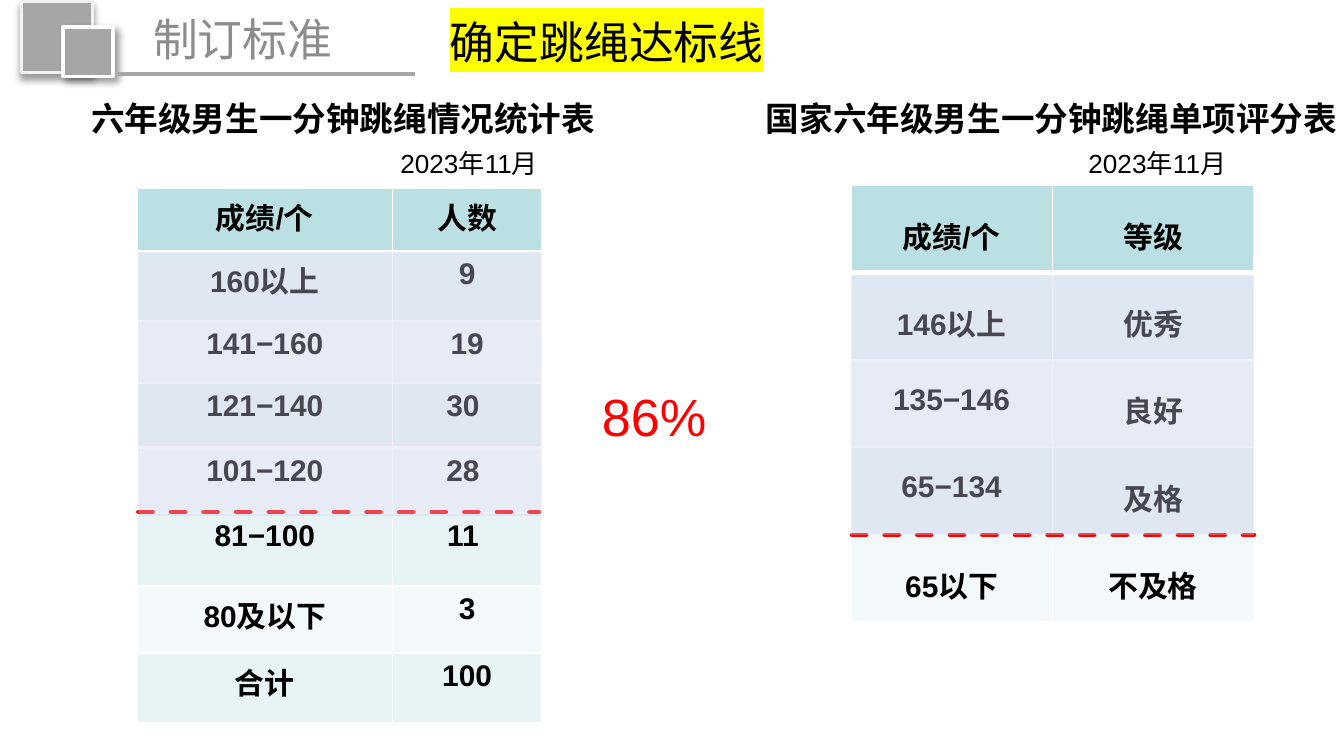
from lxml.etree import SubElement
from pptx import Presentation
from pptx.dml.color import RGBColor
from pptx.enum.dml import MSO_LINE
from pptx.enum.shapes import MSO_CONNECTOR, MSO_SHAPE
from pptx.enum.text import MSO_ANCHOR, PP_ALIGN
from pptx.oxml import parse_xml
from pptx.oxml.ns import nsdecls, qn
from pptx.util import Inches, Pt

BLACK = RGBColor(0x00, 0x00, 0x00)
WHITE = RGBColor(0xFF, 0xFF, 0xFF)
PALE_GREY = RGBColor(0xF2, 0xF2, 0xF2)
GREY = RGBColor(0xA6, 0xA6, 0xA6)
DARK_GREY = RGBColor(0x8C, 0x8C, 0x8C)
RED = RGBColor(0xFF, 0x00, 0x00)
YELLOW = RGBColor(0xFF, 0xFF, 0x00)
TEAL = RGBColor(0xBB, 0xE0, 0xE3)
BANDS = [RGBColor(0xE7, 0xF3, 0xF4), RGBColor(0xF3, 0xF9, 0xFA)]
LILAC = RGBColor(0xD1, 0xD1, 0xF0)
SANS, HAN = "Arial", "Noto Sans CJK SC"

JUMP_COUNTS = [
    ("成绩/个", "人数"), ("160以上", "9"), ("141−160", "19"), ("121−140", "30 "),
    ("101−120", "28 "), ("81−100", "11 "), ("80及以下", "3"), ("合计", "100"),
]
GRADES = [
    ("成绩/个", "等级"), ("146以上", "优秀"), ("135−146", "良好"),
    ("65−134", "及格"), ("65以下", "不及格"),
]


def add_span(para, text, size, color, font=SANS, bold=False, highlight=None):
    """Add one styled run to a paragraph."""
    span = para.add_run()
    span.text = text
    span.font.size = Pt(size)
    span.font.bold = bold
    span.font.color.rgb = color
    props = span._r.get_or_add_rPr()
    if highlight is not None:
        SubElement(SubElement(props, qn("a:highlight")), qn("a:srgbClr")).set("val", str(highlight))
    span.font.name = font
    SubElement(props, qn("a:ea")).set("typeface", HAN)


def add_text(page, box, text, size, color, anchor=MSO_ANCHOR.TOP, **style):
    """Add a one-line text box."""
    frame = page.shapes.add_textbox(*map(Inches, box)).text_frame
    frame.word_wrap = True
    frame.vertical_anchor = anchor
    add_span(frame.paragraphs[0], text, size, color, **style)


def add_rule(page, left, right, y, color, width, dashed=False):
    """Add a horizontal line, dashed with round caps on request."""
    rule = page.shapes.add_connector(
        MSO_CONNECTOR.STRAIGHT, Inches(left), Inches(y), Inches(right), Inches(y))
    rule.line.color.rgb = color
    rule.line.width = Pt(width)
    if dashed:
        rule.line.dash_style = MSO_LINE.DASH
        rule.line._get_or_add_ln().set("cap", "rnd")
    SubElement(rule._element.spPr, qn("a:effectLst"))


def add_rectangle(page, box, fill):
    """Add a plain filled rectangle without outline."""
    shape = page.shapes.add_shape(MSO_SHAPE.RECTANGLE, *map(Inches, box))
    shape.shadow.inherit = False
    shape.fill.solid()
    shape.fill.fore_color.rgb = fill
    shape.line.fill.background()
    return shape


def add_square(page, left, top, side, outline, angle):
    """Add a grey outlined square with a soft shadow."""
    square = add_rectangle(page, (left, top, side, side), GREY)
    square.line.color.rgb = outline
    square.line.width = Pt(2)
    square._element.spPr.find(qn("a:effectLst")).append(parse_xml(
        f'<a:outerShdw {nsdecls("a")} blurRad="{Pt(4)}" dist="{Pt(3)}" dir="{angle * 60000}" '
        'rotWithShape="0"><a:srgbClr val="000000"><a:alpha val="40000"/></a:srgbClr></a:outerShdw>'))


def add_veil(page, box):
    """Add a translucent rectangle over the rows that pass."""
    veil = add_rectangle(page, box, LILAC)
    color = veil._element.spPr.find(qn("a:solidFill")).find(qn("a:srgbClr"))
    SubElement(color, qn("a:alpha")).set("val", "34000")


def set_borders(cell, widths):
    """Give a cell white borders, widths in the order left, right, top, bottom."""
    props = cell._tc.get_or_add_tcPr()
    for index, (side, width) in enumerate(zip("LRTB", widths)):
        props.insert(index, parse_xml(
            f'<a:ln{side} {nsdecls("a")} w="{Pt(width)}"><a:solidFill>'
            f'<a:srgbClr val="{WHITE}"/></a:solidFill></a:ln{side}>'))


def add_grid(page, left, top, columns, heights, rows, header_rule, row_rule, spacing):
    """Add a banded two-column table."""
    grid = page.shapes.add_table(
        len(rows), len(columns), Inches(left), Inches(top),
        Inches(sum(columns)), Inches(sum(heights))).table
    for column, width in zip(grid.columns, columns):
        column.width = Inches(width)
    for index, (row, height, texts) in enumerate(zip(grid.rows, heights, rows)):
        row.height = Inches(height)
        above = {0: 1, 1: header_rule}.get(index, row_rule)
        below = row_rule if index else header_rule
        for cell, text in zip(row.cells, texts):
            cell.fill.solid()
            cell.fill.fore_color.rgb = BANDS[(index - 1) % 2] if index else TEAL
            set_borders(cell, (1, 1, above, below))
            para = cell.text_frame.paragraphs[0]
            para.alignment = PP_ALIGN.CENTER
            para.line_spacing = spacing
            add_span(para, text, 16, BLACK, bold=True)


def add_header(page, left, top):
    """Place the section mark, section name and highlighted title."""
    add_text(page, (left + 0.88, top - 0.11, 1.75, 0.78), "制订标准", 24, DARK_GREY,
             anchor=MSO_ANCHOR.MIDDLE, font=HAN)
    add_square(page, left, top, 0.53, PALE_GREY, 90)
    add_square(page, left + 0.31, top + 0.19, 0.37, WHITE, 45)
    add_rule(page, left + 0.72, left + 2.93, top + 0.54, GREY, 2.25)
    add_text(page, (left + 3.09, top + 0.05, 3.44, 0.5), "确定跳绳达标线", 24, BLACK,
             highlight=YELLOW)


def add_count_panel(page, left, top):
    """Place the class results table with its pass line."""
    add_text(page, (left, top, 4.01, 0.4), "六年级男生一分钟跳绳情况统计表", 18, BLACK,
             font=HAN, bold=True)
    add_text(page, (left + 2.3, top + 0.37, 1.51, 0.34), "2023年11月", 14, BLACK)
    heights = [0.47, 0.52, 0.46, 0.48, 0.49, 0.54, 0.5, 0.52]
    add_grid(page, left + 0.44, top + 0.72, [1.9, 1.11], heights, JUMP_COUNTS, 1.5, 1.5, 1.0)
    add_rule(page, left + 0.45, left + 3.43, top + 3.13, RED, 2.5, dashed=True)
    add_veil(page, (left + 0.45, top + 1.2, 3, 1.96))


def add_grade_panel(page, left, top):
    """Place the national grading table with its pass line."""
    add_text(page, (left, top, 4.63, 0.4), "国家六年级男生一分钟跳绳单项评分表", 18, BLACK,
             font=HAN, bold=True)
    add_text(page, (left + 2.4, top + 0.37, 1.51, 0.34), "2023年11月", 14, BLACK)
    add_grid(page, left + 0.73, top + 0.7, [1.5, 1.5], [0.65] * 5, GRADES, 3, 1, 1.5)
    add_rule(page, left + 0.74, left + 3.73, top + 3.3, RED, 2.5, dashed=True)
    add_veil(page, (left + 0.73, top + 1.37, 3, 1.93))


def main():
    """Build the slide and save it."""
    deck = Presentation()
    deck.slide_width = Inches(10)
    deck.slide_height = deck.slide_width * 9 // 16
    page = deck.slides.add_slide(deck.slide_layouts[6])
    add_header(page, 0.16, 0.01)
    add_count_panel(page, 0.58, 0.68)
    add_text(page, (4.38, 2.81, 1.33, 0.57), "86%", 28, RED)
    add_grade_panel(page, 5.6, 0.68)
    deck.save("out.pptx")


if __name__ == "__main__":
    main()
